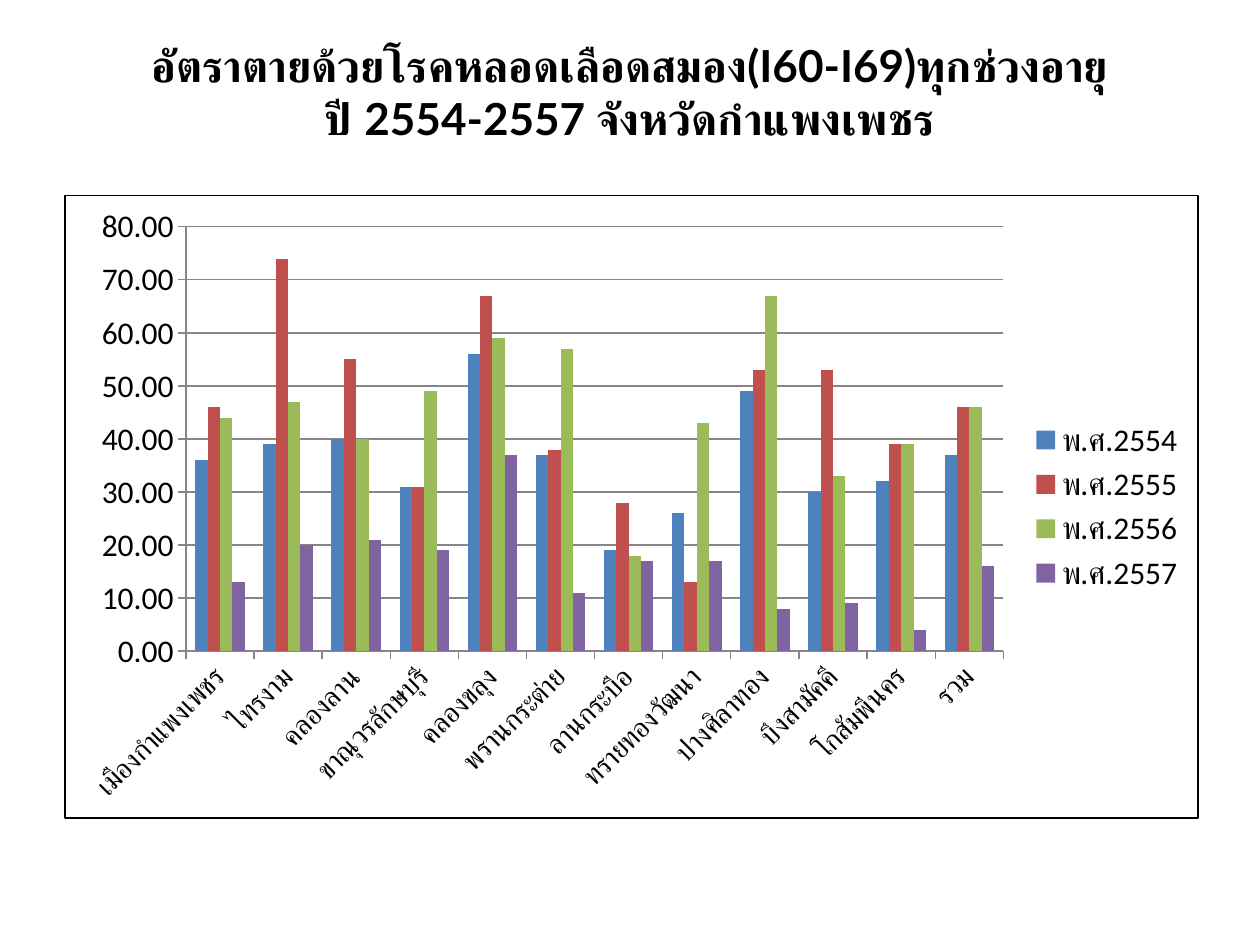
import pptx
import pptx.chart.data
import pptx.dml.color
import pptx.enum.chart
import pptx.enum.text
import pptx.oxml
import pptx.oxml.ns
import pptx.util

Pt = pptx.util.Pt

COLORS = {
    "text": "000000",
    "border": "000000",
    "grid": "868686",
    "พ.ศ.2554": "4F81BD",
    "พ.ศ.2555": "C0504D",
    "พ.ศ.2556": "9BBB59",
    "พ.ศ.2557": "8064A2",
}

TITLE_LINES = [
    "อัตราตายด้วยโรคหลอดเลือดสมอง(I60-I69)ทุกช่วงอายุ",
    "ปี 2554-2557 จังหวัดกำแพงเพชร",
]

DISTRICTS = [
    " เมืองกำแพงเพชร", " ไทรงาม", " คลองลาน", " ขาณุวรลักษบุรี",
    " คลองขลุง", " พรานกระต่าย", " ลานกระบือ", " ทรายทองวัฒนา",
    " ปางศิลาทอง", " บึงสามัคคี", " โกสัมพีนคร", "รวม",
]

DEATH_RATES = {
    "พ.ศ.2554": [36, 39, 40, 31, 56, 37, 19, 26, 49, 30, 32, 37],
    "พ.ศ.2555": [46, 74, 55, 31, 67, 38, 28, 13, 53, 53, 39, 46],
    "พ.ศ.2556": [44, 47, 40, 49, 59, 57, 18, 43, 67, 33, 39, 46],
    "พ.ศ.2557": [13, 20, 21, 19, 37, 11, 17, 17, 8, 9, 4, 16],
}


def rgb(name):
    return pptx.dml.color.RGBColor.from_string(COLORS[name])


def style_font(font, name, size, bold=False):
    font.name = name
    font.size = Pt(size)
    font.bold = bold
    font.color.rgb = rgb("text")


def add_title(slide, lines):
    shape = slide.shapes.add_textbox(Pt(36), Pt(21.6), Pt(648), Pt(61.2))
    frame = shape.text_frame
    frame.word_wrap = True
    frame.vertical_anchor = pptx.enum.text.MSO_ANCHOR.MIDDLE
    paragraph = frame.paragraphs[0]
    paragraph.alignment = pptx.enum.text.PP_ALIGN.CENTER
    for index, line in enumerate(lines):
        if index:
            paragraph.add_line_break()
        run = paragraph.add_run()
        run.text = line
        style_font(run.font, "Lato", 25.2, bold=True)


def add_chart_border(chart):
    """Outline the whole chart area, which has no public line property."""
    border = pptx.oxml.parse_xml(
        f'<c:spPr {pptx.oxml.ns.nsdecls("c", "a")}><a:noFill/>'
        f'<a:ln w="{Pt(0.75)}"><a:solidFill><a:srgbClr val="{COLORS["border"]}"/>'
        "</a:solidFill></a:ln></c:spPr>"
    )
    chart.element.find(pptx.oxml.ns.qn("c:chart")).addnext(border)


def style_axes(chart):
    value_axis, category_axis = chart.value_axis, chart.category_axis
    for axis in (value_axis, category_axis):
        axis.major_tick_mark = pptx.enum.chart.XL_TICK_MARK.OUTSIDE
        axis.format.line.color.rgb = rgb("grid")
        axis.format.line.width = Pt(0.75)
    value_axis.minimum_scale = 0
    value_axis.maximum_scale = 80
    value_axis.major_unit = 10
    value_axis.has_major_gridlines = True
    value_axis.major_gridlines.format.line.color.rgb = rgb("grid")
    value_axis.major_gridlines.format.line.width = Pt(0.75)
    value_axis.tick_labels.number_format = "0.00"
    value_axis.tick_labels.number_format_is_linked = False
    style_font(value_axis.tick_labels.font, "Calibri", 18)
    style_font(category_axis.tick_labels.font, "Calibri", 16)


def add_rate_chart(slide):
    data = pptx.chart.data.CategoryChartData(number_format="0.00")
    data.categories = DISTRICTS
    for year, rates in DEATH_RATES.items():
        data.add_series(year, rates)
    chart = slide.shapes.add_chart(
        pptx.enum.chart.XL_CHART_TYPE.COLUMN_CLUSTERED,
        Pt(36.75), Pt(111.25), Pt(648.25), Pt(356.5), data,
    ).chart
    style_font(chart.font, "Calibri", 18)
    add_chart_border(chart)
    chart.has_title = False
    chart.has_legend = True
    chart.legend.position = pptx.enum.chart.XL_LEGEND_POSITION.RIGHT
    chart.legend.include_in_layout = False
    style_font(chart.legend.font, "Calibri", 18)
    style_axes(chart)

    plot = chart.plots[0]
    plot.gap_width = 150
    plot.overlap = 0
    plot.vary_by_categories = False
    for series in plot.series:
        series.format.fill.solid()
        series.format.fill.fore_color.rgb = rgb(series.name)


def main():
    presentation = pptx.Presentation()
    presentation.slide_width = Pt(720)
    presentation.slide_height = Pt(540)
    slide = presentation.slides.add_slide(presentation.slide_layouts[6])
    add_title(slide, TITLE_LINES)
    add_rate_chart(slide)
    presentation.save("out.pptx")


if __name__ == "__main__":
    main()
